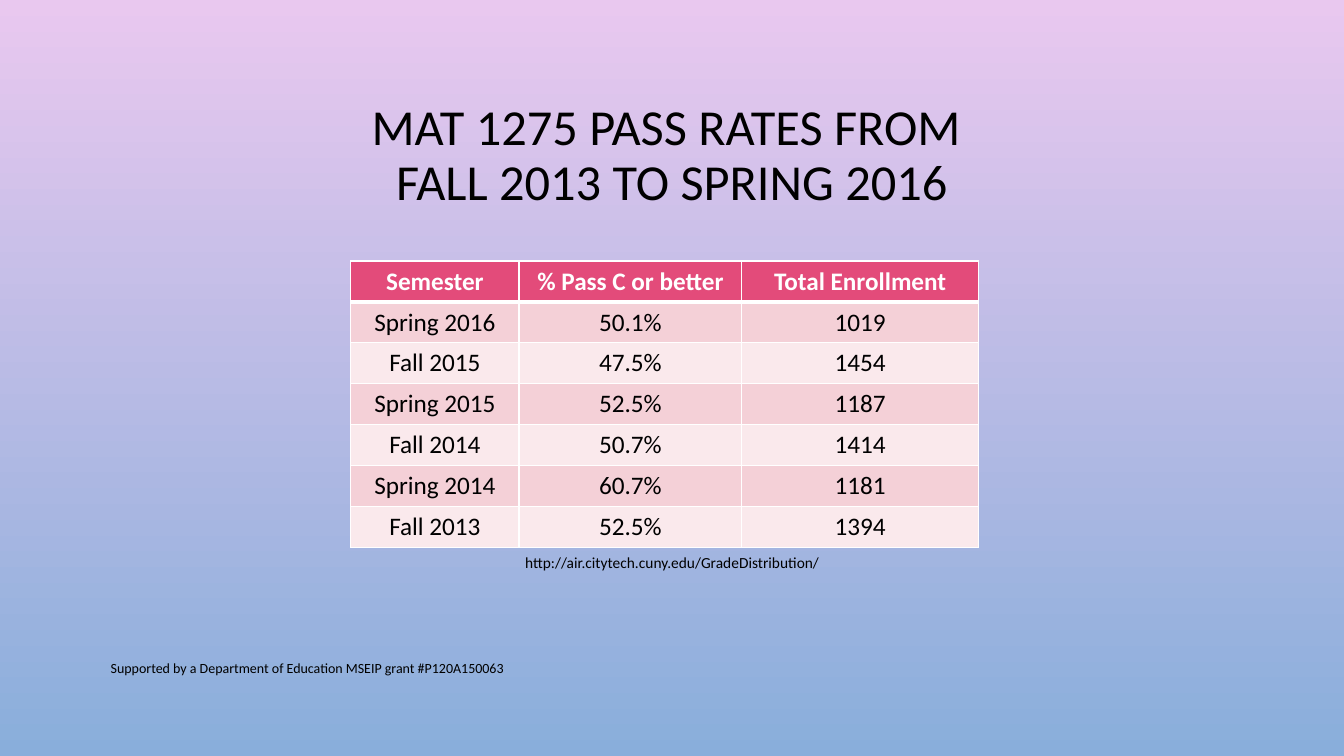
from dataclasses import dataclass

from lxml.etree import SubElement
from pptx import Presentation
from pptx.dml.color import RGBColor
from pptx.enum.text import MSO_ANCHOR as Anchor, MSO_AUTO_SIZE as AutoSize, PP_ALIGN as Align
from pptx.oxml.ns import qn
from pptx.util import Inches, Pt

# Grid: 160 columns by 90 rows of square units
COLUMNS, ROWS = 160, 90
UNIT = Inches(1) / 12


@dataclass(frozen=True)
class Theme:
    font: str = "Calibri"
    text: str = "000000"
    light: str = "FFFFFF"
    header: str = "E34B7A"
    bands: tuple[str, str] = ("F4D0D7", "FAE9EC")
    background: tuple[str, str] = ("E9C8EF", "89AEDB")
    title_size: int = 36
    table_size: int = 18
    source_size: int = 11
    grant_size: int = 10


@dataclass(frozen=True)
class Box:
    column: float
    row: float
    width: float
    height: float

    def lengths(self) -> list[int]:
        return [units(n) for n in (self.column, self.row, self.width, self.height)]


@dataclass(frozen=True)
class Label:
    text: str
    box: Box
    size: int
    align: Align = Align.CENTER
    anchor: Anchor = Anchor.MIDDLE
    auto_size: AutoSize = AutoSize.NONE
    line_spacing: float = 1.0


THEME = Theme()

LABELS = [
    Label("MAT 1275 PASS RATES FROM \vFALL 2013 TO SPRING 2016",
          Box(12, 8.16, 136, 21), THEME.title_size, line_spacing=0.9),
    Label("Supported by a Department of Education MSEIP grant #P120A150063",
          Box(12, 77.16, 87.6, 4.8), THEME.grant_size, align=Align.LEFT),
    Label("http://air.citytech.cuny.edu/GradeDistribution/",
          Box(54.72, 65.28, 50.64, 3.48), THEME.source_size,
          anchor=Anchor.TOP, auto_size=AutoSize.SHAPE_TO_FIT_TEXT),
]

PASS_RATES = [
    ("Semester", "% Pass C or better", "Total Enrollment"),
    ("Spring 2016", "50.1%", "1019"),
    ("Fall 2015", "47.5%", "1454"),
    ("Spring 2015", "52.5%", "1187"),
    ("Fall 2014", "50.7%", "1414"),
    ("Spring 2014", "60.7%", "1181"),
    ("Fall 2013", "52.5%", "1394"),
]
TABLE_BOX = Box(41.76, 31.08, 74.76, 34.08)
TABLE_COLUMNS = (20.04, 26.52, 28.2)


def units(count: float) -> int:
    return round(count * UNIT)


def apply_format(target, values: dict) -> None:
    for name, value in values.items():
        setattr(target, name, value)


def format_font(font, size: int, color: str, bold: bool = False) -> None:
    apply_format(font, {"name": THEME.font, "size": Pt(size), "bold": bold})
    font.color.rgb = RGBColor.from_string(color)


def paint_background(slide) -> None:
    fill = slide.background.fill
    fill.gradient()
    fill.gradient_angle = 270
    for stop, color in zip(fill.gradient_stops, THEME.background):
        stop.color.rgb = RGBColor.from_string(color)


def add_label(slide, label: Label) -> None:
    frame = slide.shapes.add_textbox(*label.box.lengths()).text_frame
    apply_format(frame, {"word_wrap": True, "auto_size": label.auto_size,
                         "vertical_anchor": label.anchor})
    paragraph = frame.paragraphs[0]
    apply_format(paragraph, {"text": label.text, "alignment": label.align,
                             "line_spacing": label.line_spacing})
    for run in paragraph.runs:
        format_font(run.font, label.size, THEME.text)


def add_borders(cell, top: int, bottom: int) -> None:
    properties = cell._tc.get_or_add_tcPr()
    for side, width in {"L": 1, "R": 1, "T": top, "B": bottom}.items():
        line = SubElement(properties, qn(f"a:ln{side}"), w=str(Pt(width)))
        fill = SubElement(line, qn("a:solidFill"))
        SubElement(fill, qn("a:srgbClr"), val=THEME.light)


def add_pass_rates(slide) -> None:
    table = slide.shapes.add_table(len(PASS_RATES), len(TABLE_COLUMNS),
                                   *TABLE_BOX.lengths()).table
    table.horz_banding = False
    for column, width in zip(table.columns, TABLE_COLUMNS):
        column.width = units(width)
    for row_index, values in enumerate(PASS_RATES):
        is_header = row_index == 0
        table.rows[row_index].height = units(TABLE_BOX.height / len(PASS_RATES))
        fill_color = THEME.header if is_header else THEME.bands[(row_index - 1) % 2]
        for column_index, value in enumerate(values):
            cell = table.cell(row_index, column_index)
            # The rule under the header is thicker
            add_borders(cell, top=3 if row_index == 1 else 1, bottom=3 if is_header else 1)
            cell.fill.solid()
            cell.fill.fore_color.rgb = RGBColor.from_string(fill_color)
            paragraph = cell.text_frame.paragraphs[0]
            apply_format(paragraph, {"text": value, "alignment": Align.CENTER})
            format_font(paragraph.runs[0].font, THEME.table_size,
                        THEME.light if is_header else THEME.text, is_header)


def main() -> None:
    presentation = Presentation()
    apply_format(presentation, {"slide_width": units(COLUMNS), "slide_height": units(ROWS)})
    slide = presentation.slides.add_slide(presentation.slide_layouts[6])
    paint_background(slide)
    add_pass_rates(slide)
    for label in LABELS:
        add_label(slide, label)
    presentation.save("out.pptx")


if __name__ == "__main__":
    main()
